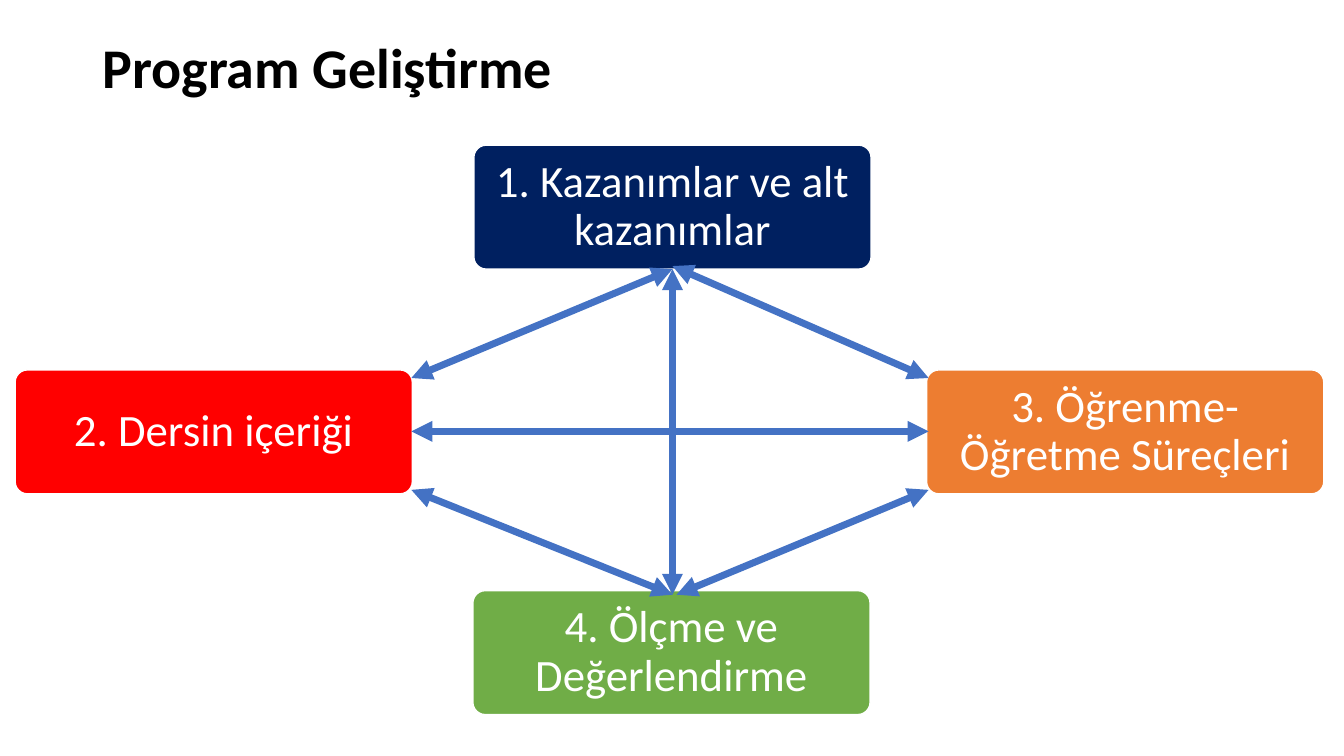
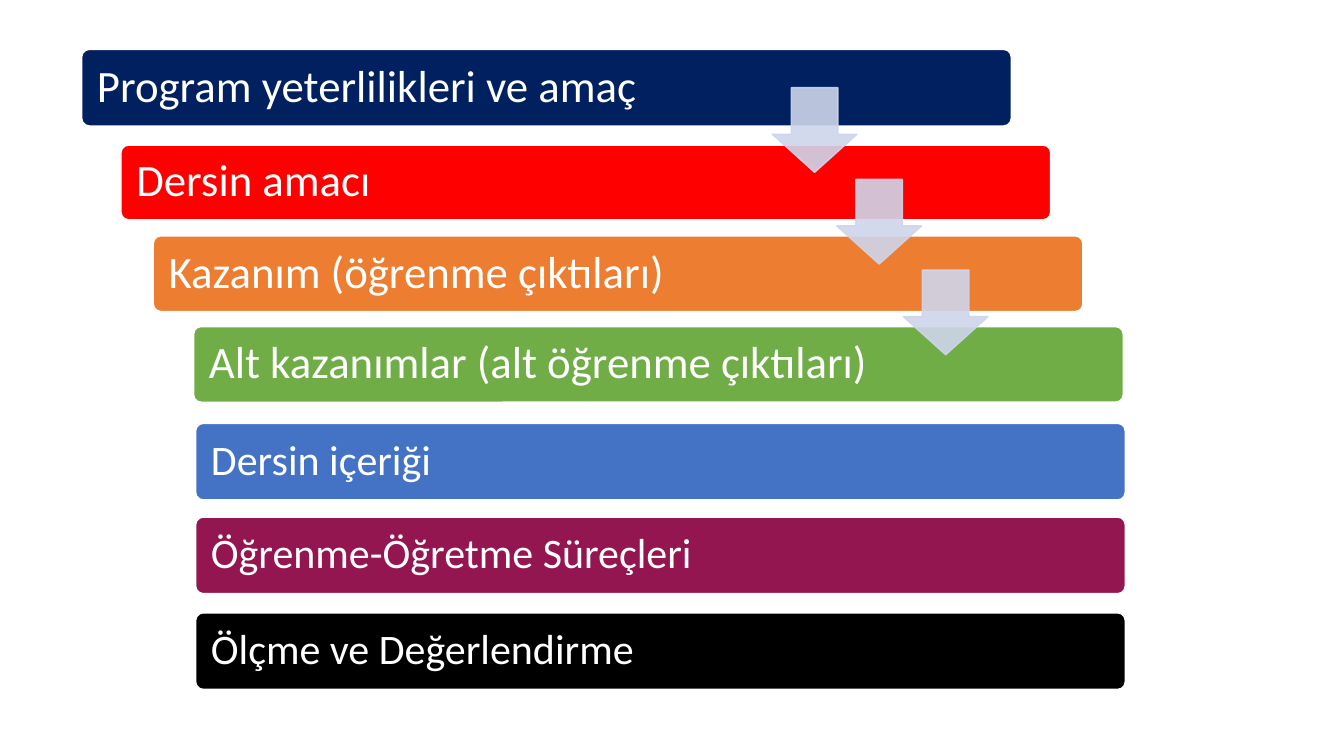
from lxml import etree
from pptx import Presentation
from pptx import util as u
from pptx.dml import color
from pptx.enum import shapes, text
from pptx.oxml import ns

NAVY, RED, ORANGE, GREEN = "002060", "FF0000", "ED7D31", "70AD47"
BLUE, PLUM, BLACK, WHITE, PALE = "4472C4", "941651", "000000", "FFFFFF", "CFD5EA"


def rgb(value):
    return color.RGBColor.from_string(value)


class Deck:
    font = "Calibri"
    line_spacing = 0.9

    def __init__(self):
        self.prs = Presentation()
        self.prs.slide_width = u.Inches(13.33)
        self.prs.slide_height = u.Inches(7.5)
        self.slide = None

    def new_slide(self):
        self.slide = self.prs.slides.add_slide(self.prs.slide_layouts[6])

    def add_words(self, frame, words, size, ink, align, bold=False):
        frame.word_wrap = True
        frame.vertical_anchor = text.MSO_ANCHOR.MIDDLE
        paragraph = frame.paragraphs[0]
        paragraph.alignment = align
        paragraph.line_spacing = self.line_spacing
        run = paragraph.add_run()
        run.text = words
        run.font.name = self.font
        run.font.size = u.Pt(size)
        run.font.bold = bold
        run.font.color.rgb = rgb(ink)

    def title(self, words):
        heading = self.slide.shapes.add_textbox(*map(u.Inches, (0.92, 0.21, 11.5, 0.97)))
        self.add_words(heading.text_frame, words, 40, BLACK, text.PP_ALIGN.LEFT, bold=True)

    def shape(self, kind, box, fill, edge, adjustments):
        item = self.slide.shapes.add_shape(kind, *map(u.Inches, box))
        item.shadow.inherit = False
        item.fill.solid()
        item.fill.fore_color.rgb = rgb(fill)
        item.line.color.rgb = rgb(edge)
        item.line.width = u.Pt(1)
        for index, value in enumerate(adjustments):
            item.adjustments[index] = value
        return item

    def card(self, box, fill, words, size=32, align=text.PP_ALIGN.CENTER, inset=0.1):
        panel = self.shape(shapes.MSO_SHAPE.ROUNDED_RECTANGLE, box, fill, WHITE, [0.1])
        frame = panel.text_frame
        frame.margin_left = frame.margin_right = u.Inches(inset)
        frame.margin_top = frame.margin_bottom = 0
        self.add_words(frame, words, size, WHITE, align)

    def down_arrow(self, left, top, side=0.84):
        arrow = self.shape(shapes.MSO_SHAPE.DOWN_ARROW, (left, top, side, side),
                           PALE, PALE, [0.55, 0.45])
        for tint in arrow.element.spPr.iter(ns.qn("a:srgbClr")):
            etree.SubElement(tint, ns.qn("a:alpha"), val="90000")

    def double_arrow(self, start, end):
        link = self.slide.shapes.add_connector(
            shapes.MSO_CONNECTOR.STRAIGHT, *map(u.Inches, start + end))
        link.line.color.rgb = rgb(BLUE)
        link.line.width = u.Pt(5)
        properties = link.element.spPr
        stroke = properties.find(ns.qn("a:ln"))
        for tag in ("a:headEnd", "a:tailEnd"):
            etree.SubElement(stroke, ns.qn(tag), type="triangle")
        etree.SubElement(properties, ns.qn("a:effectLst"))


def development_cycle(deck):
    deck.new_slide()
    deck.title("Program Geliştirme")
    for left, top, fill, words in (
        (4.7, 1.44, NAVY, "1. Kazanımlar ve alt kazanımlar"),
        (0.15, 3.67, RED, "2. Dersin içeriği"),
        (9.19, 3.67, ORANGE, "3. Öğrenme-Öğretme Süreçleri"),
        (4.69, 5.86, GREEN, "4. Ölçme ve Değerlendirme"),
    ):
        deck.card((left, top, 3.94, 1.23), fill, words)

    outcomes, assessment = (6.67, 2.67), (6.67, 5.9)
    content_x, teaching_x = 4.08, 9.21
    upper, middle, lower = 3.75, 4.28, 4.86
    for start, end in (
        (outcomes, (content_x, upper)),
        ((6.67, 2.64), (teaching_x, upper)),
        (outcomes, assessment),
        ((teaching_x, middle), (content_x, middle)),
        (assessment, (content_x, lower)),
        ((teaching_x, lower), (6.71, 5.9)),
    ):
        deck.double_arrow(start, end)


def planning_steps(deck):
    deck.new_slide()
    for left, top, height, fill, size, words in (
        (0.81, 0.49, 0.76, NAVY, 32, "Program yeterlilikleri ve amaç"),
        (1.2, 1.44, 0.74, RED, 32, "Dersin amacı"),
        (1.52, 2.34, 0.75, ORANGE, 32, "Kazanım (öğrenme çıktıları)"),
        (1.92, 3.24, 0.75, GREEN, 32, "Alt kazanımlar (alt öğrenme çıktıları)"),
        (1.94, 4.2, 0.76, BLUE, 30, "Dersin içeriği"),
        (1.94, 5.13, 0.76, PLUM, 30, "Öğrenme-Öğretme Süreçleri"),
        (1.94, 6.08, 0.76, BLACK, 30, "Ölçme ve Değerlendirme"),
    ):
        deck.card((left, top, 9.22, height), fill, words, size, text.PP_ALIGN.LEFT, 0.13)
    for left, top in ((7.66, 0.87), (8.3, 1.78), (8.96, 2.68)):
        deck.down_arrow(left, top)


def main():
    deck = Deck()
    development_cycle(deck)
    planning_steps(deck)
    deck.prs.save("out.pptx")


if __name__ == "__main__":
    main()
